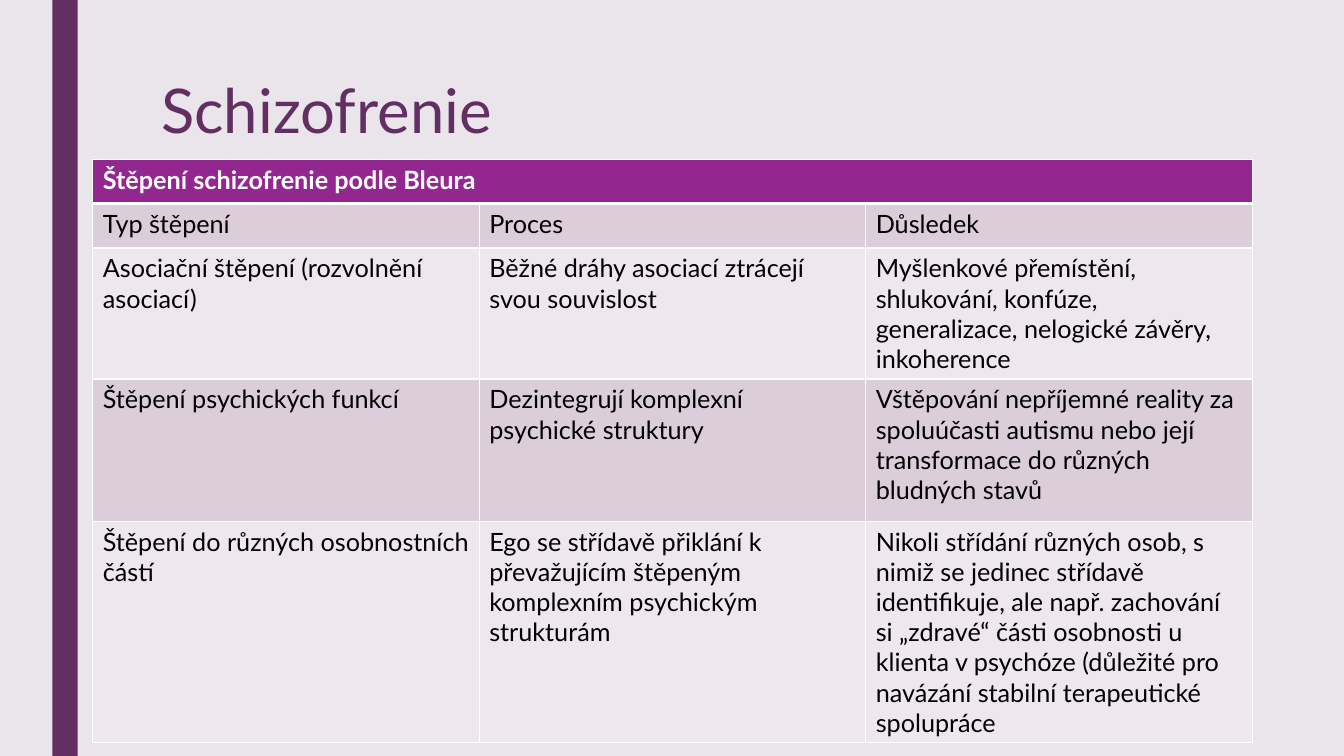
from typing import NamedTuple

from lxml import etree
from pptx import Presentation
from pptx import util as u
from pptx.dml.color import RGBColor
from pptx.enum import shapes, text
from pptx.oxml import ns

FONT = "Lato"
PLUM = RGBColor(0x63, 0x2E, 0x62)
MIST = RGBColor(0xEA, 0xE5, 0xEB)
PURPLE = RGBColor(0x92, 0x27, 0x8F)
DARK = RGBColor(0xDC, 0xCD, 0xDB)
LIGHT = RGBColor(0xEE, 0xE8, 0xEE)
WHITE = RGBColor(0xFF, 0xFF, 0xFF)
BLACK = RGBColor(0, 0, 0)


class Row(NamedTuple):
    high: float
    fill: RGBColor
    words: tuple[str, ...]
    ink: RGBColor = BLACK
    bold: bool = False
    top: int = 1
    base: int = 1


ROWS = [
    Row(0.44, PURPLE, ("Štěpení schizofrenie podle Bleura", "", ""), WHITE, True, base=3),
    Row(0.44, DARK, ("Typ štěpení", "Proces", "Důsledek"), top=3),
    Row(1.08, LIGHT, (
        "Asociační štěpení (rozvolnění asociací)",
        "Běžné dráhy asociací ztrácejí svou souvislost",
        "Myšlenkové přemístění, shlukování, konfúze, generalizace, "
        "nelogické závěry, inkoherence")),
    Row(1.41, DARK, (
        "Štěpení psychických funkcí",
        "Dezintegrují komplexní psychické struktury",
        "Vštěpování nepříjemné reality za spoluúčasti autismu nebo její "
        "transformace do různých bludných stavů")),
    Row(2.06, LIGHT, (
        "Štěpení do různých osobnostních částí",
        "Ego se střídavě přiklání k převažujícím štěpeným komplexním "
        "psychickým strukturám",
        "Nikoli střídání různých osob, s nimiž se jedinec střídavě "
        "identifikuje, ale např. zachování si „zdravé“ části osobnosti u "
        "klienta v psychóze (důležité pro navázání stabilní terapeutické "
        "spolupráce")),
]


def style(para, size: float, ink: RGBColor, bold: bool = False) -> None:
    para.font.name = FONT
    para.font.size = u.Pt(size)
    para.font.bold = bold
    para.font.color.rgb = ink


def edge(cell, row: Row) -> None:
    props = cell._tc.get_or_add_tcPr()
    sides = {"a:lnL": 1, "a:lnR": 1, "a:lnT": row.top, "a:lnB": row.base}
    for place, (tag, width) in enumerate(sides.items()):
        line = etree.Element(ns.qn(tag), w=str(u.Pt(width)))
        fill = etree.SubElement(line, ns.qn("a:solidFill"))
        etree.SubElement(fill, ns.qn("a:srgbClr"), val=str(WHITE))
        props.insert(place, line)


def add_bar(slide) -> None:
    bar = slide.shapes.add_shape(
        shapes.MSO_SHAPE.RECTANGLE,
        u.Inches(0.52), 0, u.Inches(0.25), u.Inches(7.5))
    bar.shadow.inherit = False
    bar.fill.solid()
    bar.fill.fore_color.rgb = PLUM
    bar.line.fill.background()


def add_title(slide) -> None:
    title = slide.shapes.title
    title.left, title.top = u.Inches(1.5), u.Inches(0.75)
    title.width, title.height = u.Inches(10.5), u.Inches(1.62)
    frame = title.text_frame
    frame.text = "Schizofrenie"
    frame.vertical_anchor = text.MSO_ANCHOR.TOP
    para = frame.paragraphs[0]
    para.alignment = text.PP_ALIGN.LEFT
    para.line_spacing = 0.89
    style(para, 44, PLUM)


def add_grid(slide) -> None:
    high = sum(row.high for row in ROWS)
    grid = slide.shapes.add_table(
        len(ROWS), 3, u.Inches(0.92), u.Inches(1.58),
        u.Inches(11.5), u.Inches(high)).table
    for line, row in zip(grid.rows, ROWS):
        line.height = u.Inches(row.high)
        for cell, words in zip(line.cells, row.words):
            cell.text = words
            style(cell.text_frame.paragraphs[0], 18, row.ink, row.bold)
            cell.fill.solid()
            cell.fill.fore_color.rgb = row.fill
            edge(cell, row)
    grid.cell(0, 0).merge(grid.cell(0, 2))


def main() -> None:
    deck = Presentation()
    deck.slide_width, deck.slide_height = u.Inches(13.33), u.Inches(7.5)
    slide = deck.slides.add_slide(deck.slide_layouts.get_by_name("Title Only"))
    slide.background.fill.solid()
    slide.background.fill.fore_color.rgb = MIST
    add_bar(slide)
    add_title(slide)
    add_grid(slide)
    deck.save("out.pptx")


if __name__ == "__main__":
    main()
